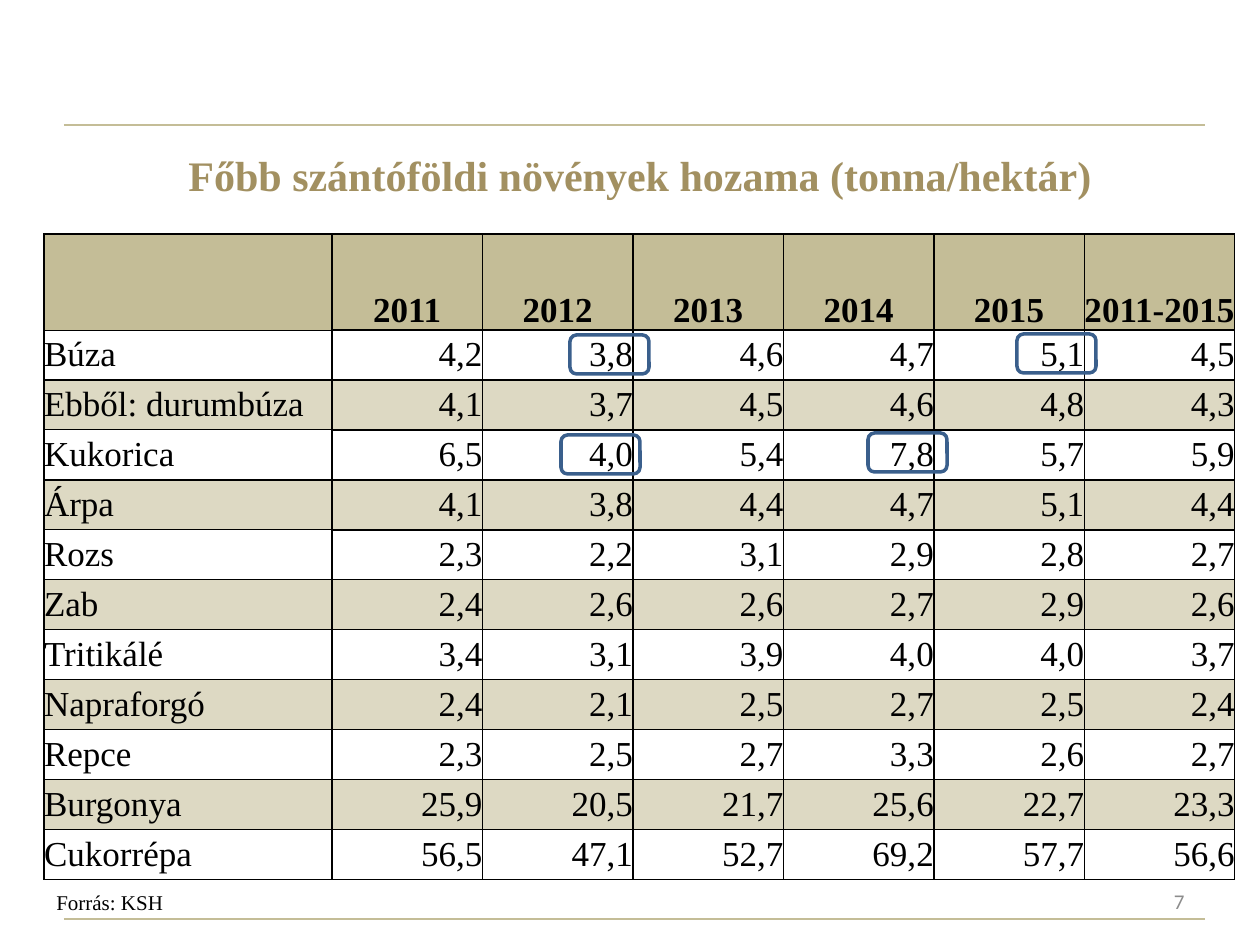
from pptx import Presentation
from pptx.dml.color import RGBColor
from pptx.enum.shapes import MSO_CONNECTOR as Connector, MSO_SHAPE as Shape
from pptx.enum.text import MSO_ANCHOR as Anchor, MSO_AUTO_SIZE as AutoSize, PP_ALIGN as Align
from pptx.oxml.ns import qn
from pptx.util import Pt
from lxml.etree import SubElement

EMU_PER_PX = 914400 / 126
SERIF = "Times New Roman"
BLACK, KHAKI, SAND, GOLD, GRAY, BLUE = "000000", "C4BD97", "DDD9C3", "A29061", "8C8C8C", "3A5F8C"

YIELDS = [
    ("", "2011", "2012", "2013", "2014", "2015", "2011-2015"),
    ("Búza", "4,2", "3,8", "4,6", "4,7", "5,1", "4,5"),
    ("Ebből: durumbúza", "4,1", "3,7", "4,5", "4,6", "4,8", "4,3"),
    ("Kukorica", "6,5", "4,0", "5,4", "7,8", "5,7", "5,9"),
    ("Árpa", "4,1", "3,8", "4,4", "4,7", "5,1", "4,4"),
    ("Rozs", "2,3", "2,2", "3,1", "2,9", "2,8", "2,7"),
    ("Zab", "2,4", "2,6", "2,6", "2,7", "2,9", "2,6"),
    ("Tritikálé", "3,4", "3,1", "3,9", "4,0", "4,0", "3,7"),
    ("Napraforgó", "2,4", "2,1", "2,5", "2,7", "2,5", "2,4"),
    ("Repce", "2,3", "2,5", "2,7", "3,3", "2,6", "2,7"),
    ("Burgonya", "25,9", "20,5", "21,7", "25,6", "22,7", "23,3"),
    ("Cukorrépa", "56,5", "47,1", "52,7", "69,2", "57,7", "56,6"),
]
HIGHLIGHTS = [(868, 433), (561, 435), (1017, 334), (570, 335)]


def px(length):
    return round(length * EMU_PER_PX)


def rgb(value):
    return RGBColor.from_string(value)


class SlideWriter:
    def __init__(self, slide):
        self.slide = slide

    def format(self, paragraph, size, color=BLACK, bold=False, align=Align.LEFT, font=SERIF):
        paragraph.alignment = align
        for run in paragraph.runs:
            run.font.name = font
            run.font.size = Pt(size)
            run.font.bold = bold
            run.font.color.rgb = rgb(color)

    def rule(self, left, right, y):
        rule = self.slide.shapes.add_connector(
            Connector.STRAIGHT, px(left), px(y), px(right), px(y))
        rule.line.color.rgb = rgb(KHAKI)
        rule.line.width = Pt(0.75)
        SubElement(rule._element.spPr, qn("a:effectLst"))

    def text(self, words, box, size, anchor=Anchor.MIDDLE, grow=False, **style):
        frame = self.slide.shapes.add_textbox(*map(px, box)).text_frame
        frame.word_wrap = True
        frame.vertical_anchor = anchor
        if grow:
            frame.auto_size = AutoSize.SHAPE_TO_FIT_TEXT
        frame.text = words
        self.format(frame.paragraphs[0], size, **style)

    def highlight(self, left, top):
        frame = self.slide.shapes.add_shape(
            Shape.ROUNDED_RECTANGLE, px(left), px(top), px(79), px(39))
        frame.shadow.inherit = False
        frame.fill.background()
        frame.line.color.rgb = rgb(BLUE)
        frame.line.width = Pt(2)

    def borders(self, cell, top, bottom):
        properties = cell._tc.get_or_add_tcPr()
        for side, points in (("L", 1), ("R", 1), ("T", top), ("B", bottom)):
            edge = SubElement(properties, qn(f"a:ln{side}"), w=str(Pt(points)))
            fill = SubElement(edge, qn("a:solidFill"))
            SubElement(fill, qn("a:srgbClr"), val=BLACK)

    def cell(self, cell, words, row, column):
        header, shaded, label = row == 0, row % 2 == 0, column == 0
        self.borders(cell,
                     top=0.5 if label and not shaded else 1,
                     bottom=0.5 if label and shaded else 1)
        if shaded:
            cell.fill.solid()
            cell.fill.fore_color.rgb = rgb(KHAKI if header else SAND)
        else:
            cell.fill.background()
        cell.margin_left = cell.margin_right = cell.margin_top = cell.margin_bottom = 0
        cell.vertical_anchor = Anchor.BOTTOM if header else Anchor.MIDDLE
        cell.text_frame.text = words
        align = Align.CENTER if header else Align.JUSTIFY if label else Align.RIGHT
        self.format(cell.text_frame.paragraphs[0], 20, bold=header, align=align)

    def table(self, rows, left, top, width, label_width, header_height, row_height):
        years = len(rows[0]) - 1
        height = header_height + row_height * (len(rows) - 1)
        table = self.slide.shapes.add_table(
            len(rows), years + 1, px(left), px(top), px(width), px(height)).table
        table.first_row = table.horz_banding = False
        for index, column in enumerate(table.columns):
            column.width = px((width - label_width) / years if index else label_width)
        for index, row in enumerate(table.rows):
            row.height = px(row_height if index else header_height)
            for position, words in enumerate(rows[index]):
                self.cell(table.cell(index, position), words, index, position)


def main():
    deck = Presentation()
    deck.slide_width, deck.slide_height = px(1260), px(945)
    writer = SlideWriter(deck.slides.add_slide(deck.slide_layouts[6]))

    for y in (919, 125):
        writer.rule(64, 1205, y)
    writer.text("Főbb szántóföldi növények hozama (tonna/hektár)", (73, 116, 1134, 118), 24,
                color=GOLD, bold=True, align=Align.CENTER)
    writer.text("Forrás: KSH", (44, 883, 277, 38), 12, anchor=Anchor.TOP, grow=True)
    writer.text("7", (903, 876, 294, 50), 12, color=GRAY, align=Align.RIGHT, font="Calibri")
    writer.table(YIELDS, 44, 234, 1191, label_width=288, header_height=96, row_height=50)
    for left, top in HIGHLIGHTS:
        writer.highlight(left, top)

    deck.save("out.pptx")


if __name__ == "__main__":
    main()
